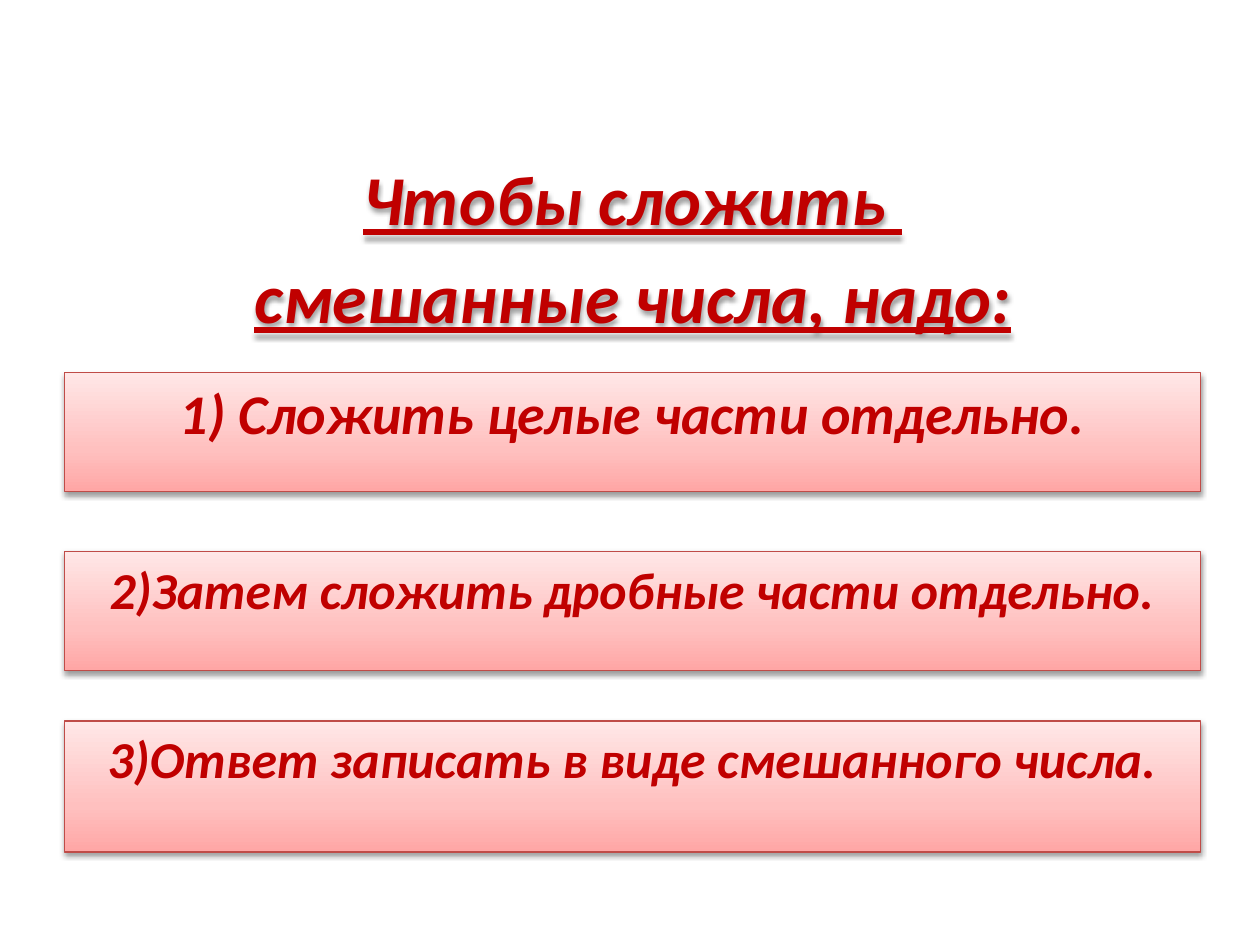
from lxml import etree
from pptx import Presentation
from pptx import util as u
from pptx.dml.color import RGBColor
from pptx.enum import shapes, text
from pptx.oxml import ns

LEFT, WIDTH = 37, 649
RULES = [  # wording, top, height, font size
    ("1) Сложить целые части отдельно.", 213, 68, 32),
    ("2)Затем сложить дробные части отдельно.", 315, 68, 29.6),
    ("3)Ответ записать в виде смешанного числа.", 412, 75, 29.6),
]


def color(value):
    return RGBColor.from_string(value)


def add_element(parent, tag, **attributes):
    return etree.SubElement(parent, ns.qn(tag), {k: str(v) for k, v in attributes.items()})


class RuleSlide:
    FONT = "Calibri"
    INK = "C00000"
    BORDER = "BF4C48"
    STOPS = [(0, "FFA6A5"), (35, "FFC0BF"), (100, "FFE7E7")]

    def __init__(self, presentation):
        self.slide = presentation.slides.add_slide(presentation.slide_layouts[5])

    def set_text(self, shape, lines, size, underline=None):
        frame = shape.text_frame
        frame.word_wrap = True
        frame.auto_size = text.MSO_AUTO_SIZE.NONE
        frame.vertical_anchor = text.MSO_ANCHOR.TOP
        frame.text = "\n".join(lines)
        for index, paragraph in enumerate(frame.paragraphs):
            paragraph.alignment = text.PP_ALIGN.CENTER
            paragraph.space_before = u.Pt(0.2 * size if index else 0)
            font = paragraph.font
            font.name, font.size = self.FONT, u.Pt(size)
            font.bold = font.italic = True
            font.underline = underline
            font.color.rgb = color(self.INK)

    def drop_shadow(self, shape):
        shape.shadow.inherit = False
        effects = shape._element.spPr.find(ns.qn("a:effectLst"))
        shadow = add_element(effects, "a:outerShdw", blurRad=u.Pt(3.1), dist=u.Pt(1.6),
                             dir=5400000, rotWithShape=0)
        shade = add_element(shadow, "a:srgbClr", val="000000")
        add_element(shade, "a:alpha", val=38000)

    def gradient(self, shape):
        shape.fill.gradient()
        shape.fill.gradient_angle = 90
        stops = shape._element.spPr.find(".//" + ns.qn("a:gsLst"))
        for stop in list(stops):
            stops.remove(stop)
        for position, value in self.STOPS:
            stop = add_element(stops, "a:gs", pos=position * 1000)
            add_element(stop, "a:srgbClr", val=value)

    def title(self, lines, top, height, size):
        shape = self.slide.shapes.title
        shape.left, shape.top = u.Pt(LEFT), u.Pt(top)
        shape.width, shape.height = u.Pt(WIDTH), u.Pt(height)
        self.set_text(shape, lines, size, underline=True)
        self.drop_shadow(shape)

    def rule(self, wording, top, height, size):
        shape = self.slide.shapes.add_shape(
            shapes.MSO_SHAPE.RECTANGLE, u.Pt(LEFT), u.Pt(top), u.Pt(WIDTH), u.Pt(height))
        self.gradient(shape)
        shape.line.color.rgb = color(self.BORDER)
        shape.line.width = u.Pt(0.75)
        self.drop_shadow(shape)
        self.set_text(shape, [wording], size)


def main():
    presentation = Presentation()
    presentation.slide_width, presentation.slide_height = u.Pt(720), u.Pt(540)
    page = RuleSlide(presentation)
    page.title(["Чтобы сложить ", "смешанные числа, надо:"], 85, 56, 40)
    for rule in RULES:
        page.rule(*rule)
    presentation.save("out.pptx")


if __name__ == "__main__":
    main()
